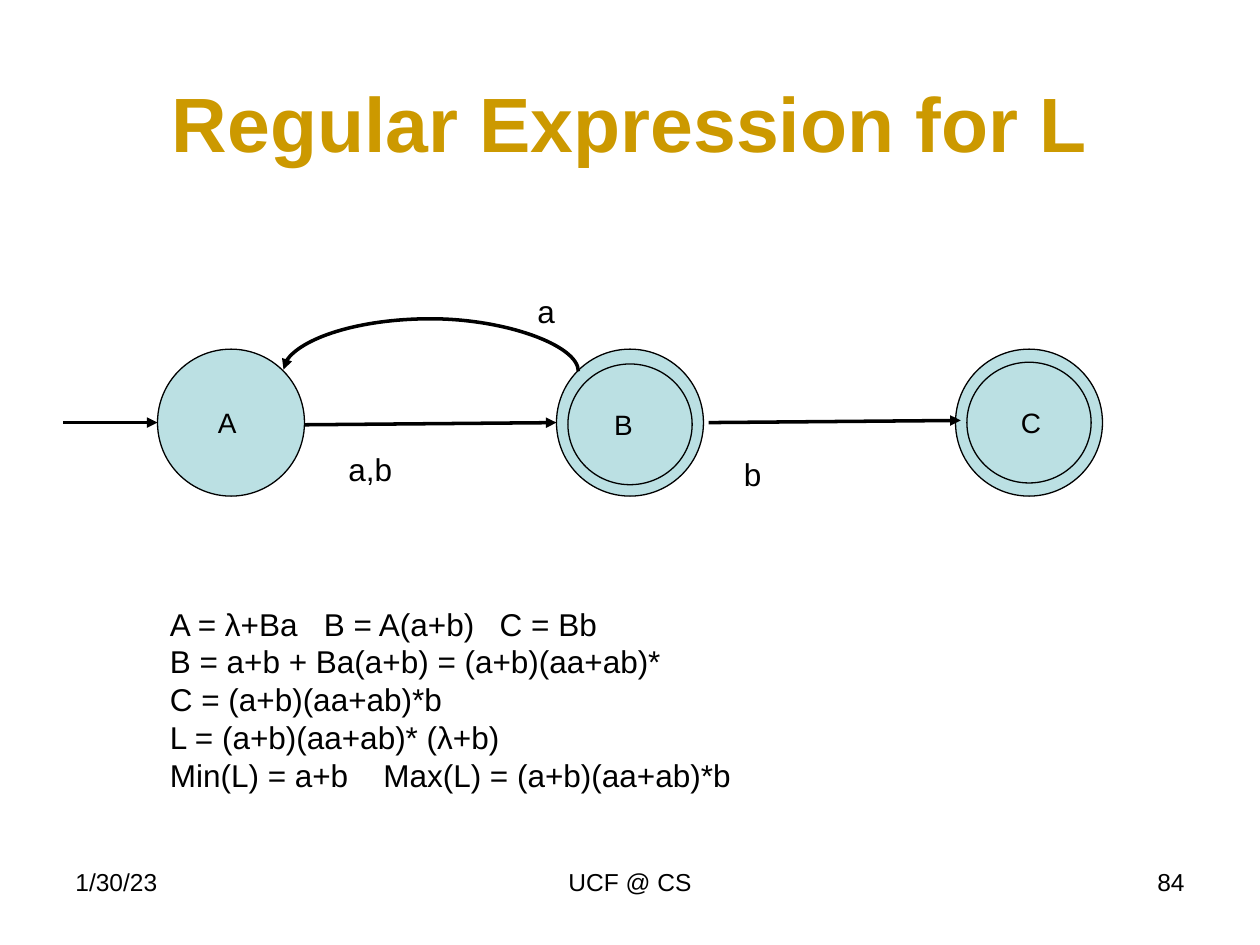
from lxml import etree
from pptx import Presentation
from pptx.dml.color import RGBColor
from pptx.enum import shapes, text
from pptx.oxml import ns
from pptx.util import Pt

COLORS = {"ink": "000000", "title": "CC9900", "state": "BBE0E3", "paper": "FFFFFF"}
ALIGN = {
    "left": text.PP_ALIGN.LEFT,
    "center": text.PP_ALIGN.CENTER,
    "right": text.PP_ALIGN.RIGHT,
}


class Deck:
    font = "Arial"
    leading = 1.2

    def __init__(self, width, height):
        self.prs = Presentation()
        self.prs.slide_width, self.prs.slide_height = Pt(width), Pt(height)
        self.s = self.prs.slides.add_slide(self.prs.slide_layouts[6])
        fill = self.s.background.fill
        fill.solid()
        fill.fore_color.rgb = self.color("paper")

    def color(self, name):
        return RGBColor.from_string(COLORS[name])

    def set_text(self, tf, content, size, color="ink", align="left", bold=False, tabs=None):
        tf.word_wrap = True
        tf.text = content
        for i, p in enumerate(tf.paragraphs):
            if tabs and i in tabs:
                tab_list = etree.SubElement(p._p.get_or_add_pPr(), ns.qn("a:tabLst"))
                for stop in tabs[i]:
                    etree.SubElement(tab_list, ns.qn("a:tab"), pos=str(Pt(stop)), algn="l")
            p.alignment = ALIGN[align]
            p.line_spacing = Pt(size * self.leading)
            for r in p.runs:
                r.font.name, r.font.size, r.font.bold = self.font, Pt(size), bold
                r.font.color.rgb = self.color(color)

    def label(self, x, y, w, h, content, size=18, **style):
        tf = self.s.shapes.add_textbox(Pt(x), Pt(y), Pt(w), Pt(h)).text_frame
        self.set_text(tf, content, size, **style)
        return tf

    def state(self, x, y, w, h, name="", inset=7.2):
        sp = self.s.shapes.add_shape(shapes.MSO_SHAPE.OVAL, Pt(x), Pt(y), Pt(w), Pt(h))
        sp.shadow.inherit = False
        sp.fill.solid()
        sp.fill.fore_color.rgb = self.color("state")
        sp.line.color.rgb = self.color("ink")
        sp.line.width = Pt(0.75)
        if name:
            tf = sp.text_frame
            tf.vertical_anchor = text.MSO_ANCHOR.MIDDLE
            tf.margin_left = Pt(inset)
            self.set_text(tf, name, 16)

    def arrow(self, x1, y1, x2, y2, kind=shapes.MSO_CONNECTOR.STRAIGHT):
        c = self.s.shapes.add_connector(kind, Pt(x1), Pt(y1), Pt(x2), Pt(y2))
        c.line.color.rgb = self.color("ink")
        c.line.width = Pt(2)
        sp_pr = c._element.spPr
        etree.SubElement(sp_pr.find(ns.qn("a:ln")), ns.qn("a:tailEnd"), type="triangle")
        etree.SubElement(sp_pr, ns.qn("a:effectLst"))
        return c

    def arc_arrow(self, x1, y1, x2, y2, rise):
        span, drop = x1 - x2, y1 - y2
        cx, cy = (x1 + x2) / 2, (y1 + y2) / 2
        c = self.arrow(cx - drop / 2, cy + span / 2, cx + drop / 2, cy - span / 2,
                       shapes.MSO_CONNECTOR.CURVE)
        sp_pr = c._element.spPr
        sp_pr.find(ns.qn("a:xfrm")).set("rot", "16200000")
        guides = sp_pr.find(ns.qn("a:prstGeom")).find(ns.qn("a:avLst"))
        etree.SubElement(guides, ns.qn("a:gd"), name="adj1",
                         fmla=f"val {round(rise / drop * 100000)}")

    def save(self):
        self.prs.save("out.pptx")


def main():
    deck = Deck(720, 540)
    title = deck.label(36, 21.6, 648, 90, "Regular Expression for L", 44,
                       color="title", align="center", bold=True)
    title.vertical_anchor = text.MSO_ANCHOR.MIDDLE
    title.margin_top = Pt(9)

    for x, w, content, align in (
        (36, 168, "1/30/23", "left"),
        (246, 228, "UCF @ CS", "center"),
        (516, 168, "84", "right"),
    ):
        deck.label(x, 492, w, 37.5, content, 14, align=align)

    left, top, size, step = 90, 199.5, 84, 228
    deck.state(left, top, size, size, "A", 22.2)
    for i in (1, 2):
        deck.state(left + i * step, top, size, size)

    deck.arrow(36, 241.5, 90, 241.5)
    deck.arrow(174, 242.75, 318, 241.5)
    deck.arrow(405, 241.5, 549, 240.25)
    deck.arc_arrow(330.5, 212.25, 162, 211.25, 30.3)

    deck.state(324.5, 208, 71, 69, "B", 16.1)
    deck.state(552.5, 207, 71, 69, "C", 20.5)

    for x, y, w, content in (
        (192, 253.5, 60, "a,b"),
        (418, 256.5, 37.5, "b"),
        (300, 163.5, 31, "a"),
    ):
        deck.label(x, y, w, 28.8, content)

    equations = (
        "A = λ+Ba\tB = A(a+b)\tC = Bb",
        "B = a+b + Ba(a+b) = (a+b)(aa+ab)*",
        "C = (a+b)(aa+ab)*b",
        "L = (a+b)(aa+ab)* (λ+b)",
        "Min(L) = a+b\tMax(L) = (a+b)(aa+ab)*b",
    )
    deck.label(90, 342, 540, 116.5, "\n".join(equations), tabs={0: (88, 188.5), 4: (122,)})
    deck.save()


if __name__ == "__main__":
    main()
